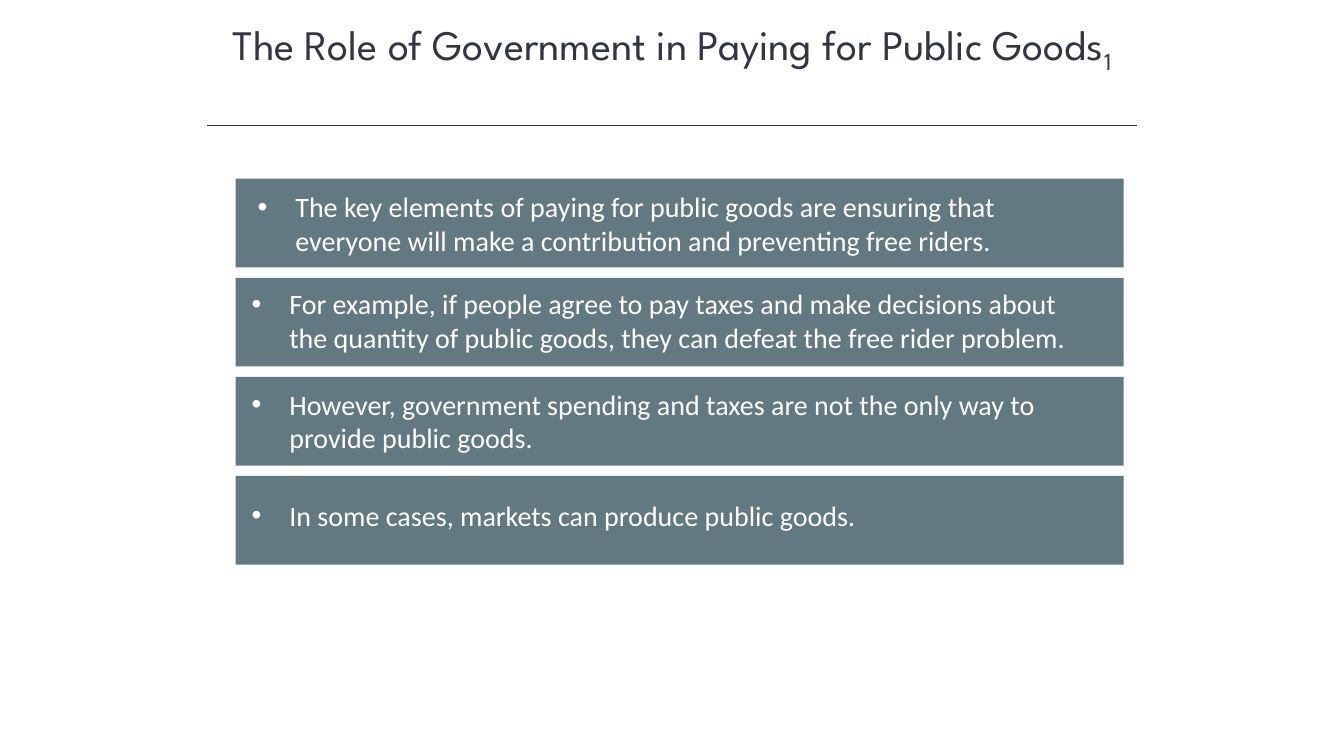
from dataclasses import dataclass

from lxml import etree
from pptx import Presentation
from pptx.dml.color import RGBColor
from pptx.enum.shapes import MSO_CONNECTOR, MSO_SHAPE
from pptx.enum.text import MSO_ANCHOR, MSO_AUTO_SIZE, PP_ALIGN
from pptx.oxml.ns import qn
from pptx.util import Pt

RECT = MSO_SHAPE.RECTANGLE
STRAIGHT = MSO_CONNECTOR.STRAIGHT
TOP, MIDDLE = MSO_ANCHOR.TOP, MSO_ANCHOR.MIDDLE
NO_FIT = MSO_AUTO_SIZE.NONE
LEFT, CENTER = PP_ALIGN.LEFT, PP_ALIGN.CENTER


@dataclass(frozen=True)
class Theme:
    """Colours, fonts and type sizes of the slide."""
    ink: RGBColor = RGBColor(0x32, 0x35, 0x42)
    bar: RGBColor = RGBColor(0x62, 0x79, 0x81)
    light: RGBColor = RGBColor(0xFF, 0xFF, 0xFF)
    title_font: str = "League Spartan"
    body_font: str = "Calibri"
    title_size: int = 30
    body_size: int = 20


THEME = Theme()
TITLE = [("The Role of Government in Paying for Public Goods", False), ("1", True)]
POINTS = [
    ("The key elements of paying for public goods are ensuring that everyone "
     "will make a contribution and preventing free riders.", 8.6, 4.3, 55.4),
    ("For example, if people agree to pay taxes and make decisions about the "
     "quantity of public goods, they can defeat the free rider problem.", 4.3, 2.9, 55.4),
    ("However, government spending and taxes are not the only way to provide "
     "public goods.", 4.3, 3.6, 55.4),
    ("In some cases, markets can produce public goods.", 4.3, 12.2, 31.7),
]


def add_run(p, text, font, size, color):
    """Add one formatted run to a paragraph."""
    r = p.add_run()
    r.text = text
    r.font.name, r.font.size = font, Pt(size)
    r.font.color.rgb = color
    return r


def add_title(s, x, y, w, h):
    """Fill the title placeholder, with its footnote mark as a subscript."""
    sp = s.shapes.title
    sp.left, sp.top, sp.width, sp.height = Pt(x), Pt(y), Pt(w), Pt(h)
    tf = sp.text_frame
    tf.word_wrap, tf.auto_size, tf.vertical_anchor = True, NO_FIT, TOP
    p = tf.paragraphs[0]
    p.alignment = CENTER
    for text, subscript in TITLE:
        r = add_run(p, text, THEME.title_font, THEME.title_size, THEME.ink)
        if subscript:
            r.font._element.set("baseline", "-25000")


def add_rule(s, x, y, w):
    """Draw the thin rule under the title."""
    line = s.shapes.add_connector(STRAIGHT, Pt(x), Pt(y), Pt(x + w), Pt(y))
    line.line.color.rgb, line.line.width = THEME.ink, Pt(1)
    etree.SubElement(line._element.spPr, qn("a:effectLst"))


def add_bar(shapes, x, y, w, h):
    """Draw one plain filled rectangle and return it."""
    sp = shapes.add_shape(RECT, Pt(x), Pt(y), Pt(w), Pt(h))
    sp.shadow.inherit = False
    sp.fill.solid()
    sp.fill.fore_color.rgb = THEME.bar
    sp.line.fill.background()
    return sp


def add_point(s, x, y, w, h, point):
    """Group a bar with the bulleted label that sits on it."""
    text, dx, dy, label_h = point
    shapes = s.shapes.add_group_shape().shapes
    add_bar(shapes, x, y, w, h)
    tf = add_bar(shapes, x + dx, y + dy, w - 19.4, label_h).text_frame
    tf.word_wrap, tf.vertical_anchor = True, MIDDLE
    p = tf.paragraphs[0]
    p.alignment = LEFT
    pPr = p._p.get_or_add_pPr()
    pPr.set("marL", str(Pt(27)))
    pPr.set("indent", str(Pt(-27)))
    etree.SubElement(pPr, qn("a:buFont")).set("typeface", "Arial")
    etree.SubElement(pPr, qn("a:buChar")).set("char", "•")
    add_run(p, text, THEME.body_font, THEME.body_size, THEME.light)


def add_points(s, x, y, w, h, gap=7.4):
    """Stack the points as equal bars that fill the given box."""
    bar_h = (h - gap * (len(POINTS) - 1)) / len(POINTS)
    for i, point in enumerate(POINTS):
        add_point(s, x, y + i * (bar_h + gap), w, bar_h, point)


def main():
    """Build and save the slide."""
    prs = Presentation()
    prs.slide_width, prs.slide_height = Pt(960), Pt(540)
    s = prs.slides.add_slide(prs.slide_layouts[5])
    add_title(s, 120, 9.4, 720, 80)
    add_rule(s, 148, 89.6, 664)
    add_points(s, 168.3, 127.6, 634.4, 275.8)
    prs.save("out.pptx")


if __name__ == "__main__":
    main()
